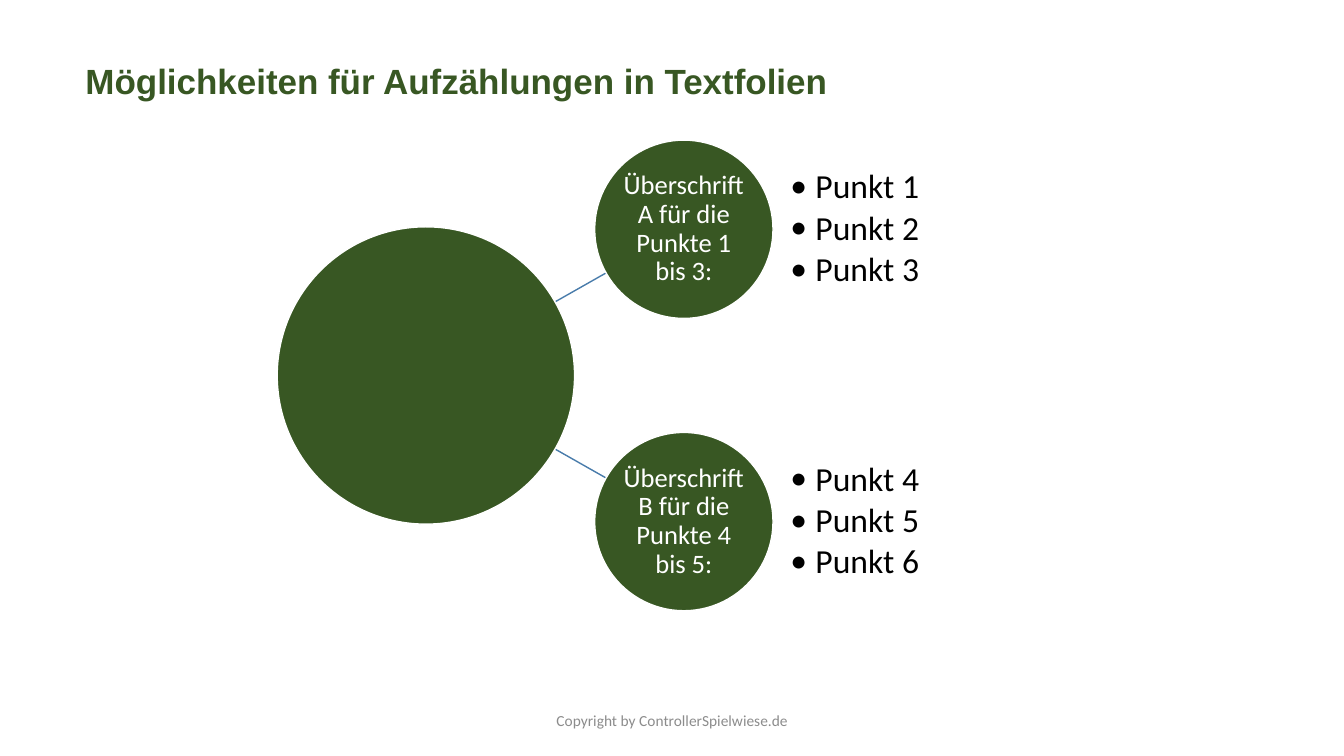
from lxml import etree
from pptx import Presentation
from pptx import util as u
from pptx.dml.color import RGBColor
from pptx.enum import shapes, text
from pptx.oxml.ns import qn

GREEN, WHITE, BLACK, BLUE, GREY = "385723", "FFFFFF", "000000", "497CAB", "8C8C8C"
CENTER_Y = 268.2       # horizontal axis of the diagram
BRANCH_OFFSET = 104.4  # distance of each branch from the axis
HUB_SIZE, BRANCH_SIZE = 212.4, 127.4

BRANCHES = [
    (-1, "Überschrift A für die Punkte 1 bis 3:", ["Punkt 1", "Punkt 2", "Punkt 3"]),
    (1, "Überschrift B für die Punkte 4 bis 5:", ["Punkt 4", "Punkt 5", "Punkt 6"]),
]


def color(value):
    return RGBColor.from_string(value)


def set_font(paragraph, name, size, value, bold=False):
    paragraph.font.name = name
    paragraph.font.size = u.Pt(size)
    paragraph.font.bold = bold
    paragraph.font.color.rgb = color(value)


def set_frame(frame, margin):
    frame.word_wrap = True
    frame.vertical_anchor = text.MSO_ANCHOR.MIDDLE
    frame.margin_left = frame.margin_right = u.Pt(margin)
    frame.margin_top = frame.margin_bottom = u.Pt(margin)


def add_text(slide, left, top, width, height):
    box = slide.shapes.add_textbox(u.Pt(left), u.Pt(top), u.Pt(width), u.Pt(height))
    box.text_frame.word_wrap = True
    return box.text_frame


def add_title(slide, words):
    frame = add_text(slide, 54, 38.9, 679, 37.4)
    frame.text = words
    set_font(frame.paragraphs[0], "Arial", 25, GREEN, bold=True)


def add_footer(slide, words):
    frame = add_text(slide, 318.2, 500.4, 324, 28.8)
    frame.vertical_anchor = text.MSO_ANCHOR.MIDDLE
    frame.text = words
    frame.paragraphs[0].alignment = text.PP_ALIGN.CENTER
    set_font(frame.paragraphs[0], "Calibri", 11, GREY)


def add_spoke(slide, side):
    line = slide.shapes.add_connector(
        shapes.MSO_CONNECTOR.STRAIGHT,
        u.Pt(378), u.Pt(CENTER_Y + side * 42.1),
        u.Pt(432.7), u.Pt(CENTER_Y + side * 73.1))
    line.line.color.rgb = color(BLUE)
    line.line.width = u.Pt(1)
    etree.SubElement(line.element.spPr, qn("a:effectLst"))


def add_circle(slide, left, center_y, size, label=None):
    circle = slide.shapes.add_shape(
        shapes.MSO_SHAPE.OVAL, u.Pt(left), u.Pt(center_y - size / 2), u.Pt(size), u.Pt(size))
    circle.shadow.inherit = False
    circle.fill.solid()
    circle.fill.fore_color.rgb = color(GREEN)
    circle.line.color.rgb = color(WHITE)
    circle.line.width = u.Pt(1)
    if label:
        set_frame(circle.text_frame, 0.7)
        circle.text_frame.text = label
        paragraph = circle.text_frame.paragraphs[0]
        paragraph.alignment = text.PP_ALIGN.CENTER
        paragraph.line_spacing = 0.9
        set_font(paragraph, "Calibri", 19, WHITE)


def add_bullets(slide, center_y, points):
    frame = add_text(slide, 564.5, center_y - BRANCH_SIZE / 2, 190.8, BRANCH_SIZE)
    set_frame(frame, 0)
    frame.text = "\n".join(points)
    for paragraph in frame.paragraphs:
        properties = paragraph._p.get_or_add_pPr()
        properties.set("marL", str(u.Pt(18)))
        properties.set("indent", str(-u.Pt(18)))
        etree.SubElement(properties, qn("a:buFont"), typeface="Calibri")
        etree.SubElement(properties, qn("a:buChar"), char="•")
        paragraph.line_spacing = 0.9
        paragraph.space_after = u.Pt(3.6)
        set_font(paragraph, "Calibri", 24, BLACK)


def main():
    presentation = Presentation()
    presentation.slide_width, presentation.slide_height = u.Pt(960), u.Pt(540)
    slide = presentation.slides.add_slide(presentation.slide_layouts[6])

    add_title(slide, "Möglichkeiten für Aufzählungen in Textfolien")
    add_footer(slide, "Copyright by ControllerSpielwiese.de")

    # Spokes lie behind the circles
    for side, _, _ in BRANCHES:
        add_spoke(slide, side)
    add_circle(slide, 198, CENTER_Y, HUB_SIZE)

    # Branch circles with their bullet lists
    for side, heading, points in BRANCHES:
        center_y = CENTER_Y + side * BRANCH_OFFSET
        add_circle(slide, 424.8, center_y, BRANCH_SIZE, heading)
        add_bullets(slide, center_y, points)

    presentation.save("out.pptx")


if __name__ == "__main__":
    main()
